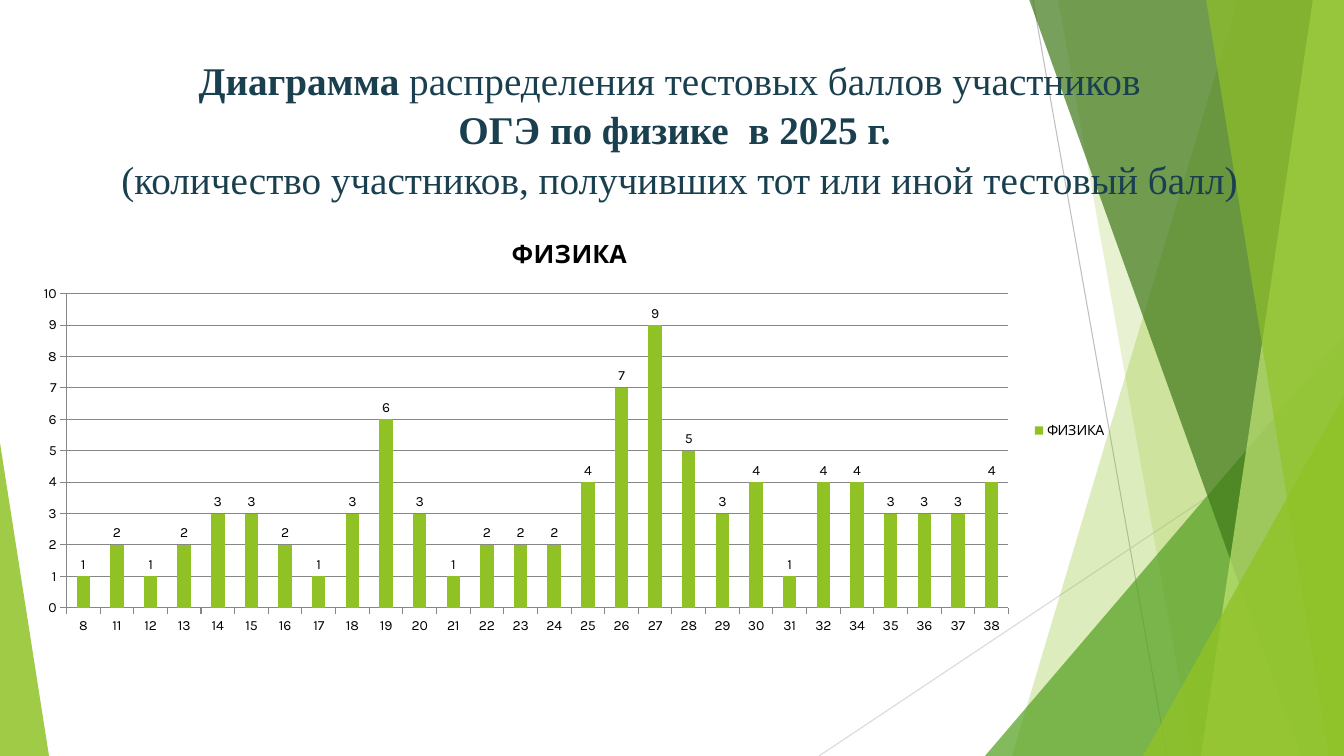
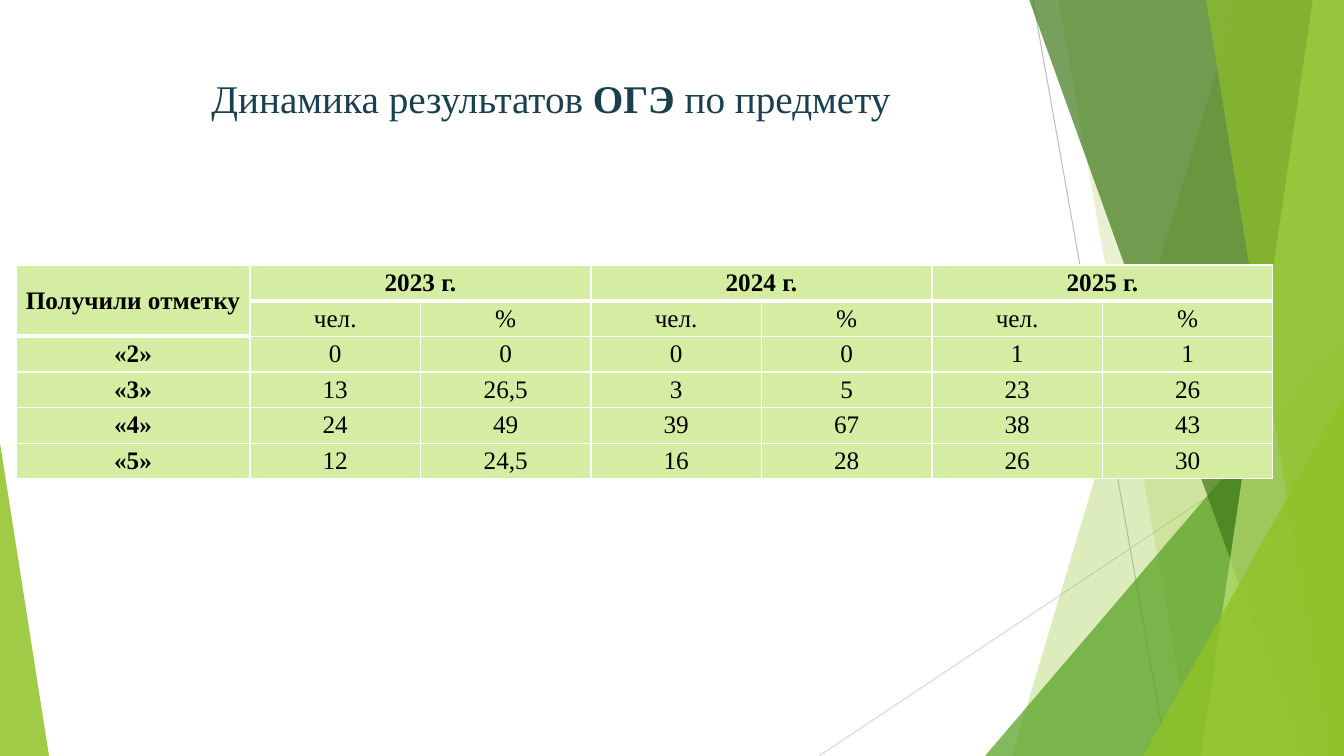
import pptx
import pptx.chart.data
import pptx.dml.color
import pptx.enum.chart
import pptx.enum.shapes
import pptx.enum.text
import pptx.oxml
import pptx.oxml.ns
import pptx.util

PX = 12192000 / 1344
SLIDE_WIDTH, SLIDE_HEIGHT = 1344, 756
WHITE, BLACK, INK = "FFFFFF", "000000", "1A4050"
GREEN, LEAF, FOREST, LIME, PALE = "90C226", "54A021", "3F7819", "C0E474", "D5EDA2"
GRID, RAY_DARK, RAY_LIGHT = "868686", "BFBFBF", "D9D9D9"
SERIF, SANS = "Times New Roman", "Karla"

DECORATION = [
    ("ray", (1033, 0, 1167, 756, RAY_DARK)),
    ("ray", (1344, 406, 819, 756, RAY_LIGHT)),
    ("band", (1238, 1012, GREEN, 30)),
    ("band", (1058, 1193, GREEN, 20)),
    ("wedge", (985, 336, 359, 420, 1, LEAF, 72)),
    ("band", (1029, 1301, FOREST, 70)),
    ("band", (1313, 1201, LIME, 70)),
    ("band", (1206, 1329, GREEN, 65)),
    ("wedge", (1143, 396, 201, 360, 1, GREEN, 80)),
    ("wedge", (0, 443, 49, 313, 0, GREEN, 85)),
]

SCORES = [8, *range(11, 33), *range(34, 39)]
PARTICIPANTS = [1, 2, 1, 2, 3, 3, 2, 1, 3, 6, 3, 1, 2, 2,
                2, 4, 7, 9, 5, 3, 4, 1, 4, 4, 3, 3, 3, 4]

MARKS = [
    ["Получили отметку", "2023 г.", "", "2024 г.", "", "2025 г.", ""],
    ["", *["чел.", "%"] * 3],
    ["«2»", "0", "0", "0", "0", "1", "1"],
    ["«3»", "13", "26,5", "3", "5", "23", "26"],
    ["«4»", "24", "49", "39", "67", "38", "43"],
    ["«5»", "12", "24,5", "16", "28", "26", "30"],
]
MERGES = [(0, 0, 1, 0), (0, 1, 0, 2), (0, 3, 0, 4), (0, 5, 0, 6)]


def emu(*lengths):
    return [round(length * PX) for length in lengths]


def rgb(value):
    return pptx.dml.color.RGBColor.from_string(value)


def apply(target, **values):
    for name, value in values.items():
        setattr(target, name, value)


class Deck:
    def __init__(self):
        self.presentation = pptx.Presentation()
        width, height = emu(SLIDE_WIDTH, SLIDE_HEIGHT)
        apply(self.presentation, slide_width=width, slide_height=height)
        self.slide = None

    def new_slide(self):
        self.slide = self.presentation.slides.add_slide(self.presentation.slide_layouts[6])
        self.slide.background.fill.solid()
        self.slide.background.fill.fore_color.rgb = rgb(WHITE)
        for kind, values in DECORATION:
            getattr(self, kind)(*values)

    def font(self, font, size, face, color, bold=False):
        apply(font, size=pptx.util.Pt(size), name=face, bold=bold)
        font.color.rgb = rgb(color)

    def tint(self, shape, color, opacity):
        shape.shadow.inherit = False
        shape.line.fill.background()
        shape.fill.solid()
        shape.fill.fore_color.rgb = rgb(color)
        for value in shape.element.spPr.iter(pptx.oxml.ns.qn("a:srgbClr")):
            alpha = pptx.oxml.parse_xml(
                f'<a:alpha {pptx.oxml.ns.nsdecls("a")} val="{opacity * 1000}"/>')
            value.append(alpha)

    def ray(self, x1, y1, x2, y2, color):
        ray = self.slide.shapes.add_connector(
            pptx.enum.shapes.MSO_CONNECTOR.STRAIGHT, *emu(x1, y1, x2, y2))
        ray.line.width = pptx.util.Pt(0.75)
        ray.line.color.rgb = rgb(color)
        ray.element.spPr.append(
            pptx.oxml.parse_xml(f'<a:effectLst {pptx.oxml.ns.nsdecls("a")}/>'))

    def band(self, top_x, bottom_x, color, opacity):
        outline = self.slide.shapes.build_freeform(top_x, -1, PX)
        outline.add_line_segments(
            [(SLIDE_WIDTH, -1), (SLIDE_WIDTH, SLIDE_HEIGHT), (bottom_x, SLIDE_HEIGHT)])
        self.tint(outline.convert_to_shape(), color, opacity)

    def wedge(self, x, y, width, height, apex, color, opacity):
        wedge = self.slide.shapes.add_shape(
            pptx.enum.shapes.MSO_SHAPE.ISOSCELES_TRIANGLE, *emu(x, y, width, height))
        wedge.adjustments[0] = apex
        self.tint(wedge, color, opacity)

    def title(self, x, y, width, height, phrases):
        frame = self.slide.shapes.add_textbox(*emu(x, y, width, height)).text_frame
        apply(frame, word_wrap=True, vertical_anchor=pptx.enum.text.MSO_ANCHOR.TOP)
        heading = frame.paragraphs[0]
        apply(heading, alignment=pptx.enum.text.PP_ALIGN.CENTER, line_spacing=1.05)
        heading._p.get_or_add_pPr().set("marL", str(emu(6)[0]))
        for phrase, bold in phrases:
            for number, piece in enumerate(phrase.split("\n")):
                if number:
                    heading.add_line_break()
                if piece:
                    run = heading.add_run()
                    run.text = piece
                    self.font(run.font, 28, SERIF, INK, bold)

    def column_chart(self, x, y, width, height, name, categories, values):
        data = pptx.chart.data.CategoryChartData()
        data.categories = [str(category) for category in categories]
        data.add_series(name, values)
        chart = self.slide.shapes.add_chart(
            pptx.enum.chart.XL_CHART_TYPE.COLUMN_CLUSTERED,
            *emu(x, y, width, height), data).chart
        self.font(chart.font, 10, SANS, BLACK)
        apply(chart, has_title=True, has_legend=True)
        caption = chart.chart_title.text_frame
        caption.text = name
        self.font(caption.paragraphs[0].runs[0].font, 18, SANS, BLACK, True)
        apply(chart.legend, include_in_layout=False,
              position=pptx.enum.chart.XL_LEGEND_POSITION.RIGHT)
        for axis in (chart.category_axis, chart.value_axis):
            axis.major_tick_mark = pptx.enum.chart.XL_TICK_MARK.OUTSIDE
            axis.format.line.color.rgb = rgb(GRID)
        chart.value_axis.has_major_gridlines = True
        chart.value_axis.major_gridlines.format.line.color.rgb = rgb(GRID)
        plot = chart.plots[0]
        apply(plot, gap_width=150, vary_by_categories=False, has_data_labels=True)
        apply(plot.data_labels, show_value=True,
              position=pptx.enum.chart.XL_LABEL_POSITION.OUTSIDE_END)
        columns = plot.series[0].format.fill
        columns.solid()
        columns.fore_color.rgb = rgb(GREEN)

    def borders(self, cell, **widths):
        for side, width in widths.items():
            cell._tc.get_or_add_tcPr().append(pptx.oxml.parse_xml(
                f'<a:ln{side} {pptx.oxml.ns.nsdecls("a")} w="{width * 12700}">'
                f'<a:solidFill><a:srgbClr val="{WHITE}"/></a:solidFill></a:ln{side}>'))

    def table(self, x, y, width, height, first_width, rows, merges):
        table = self.slide.shapes.add_table(
            len(rows), len(rows[0]), *emu(x, y, width, height)).table
        apply(table, first_row=False, horz_banding=False)
        others = len(rows[0]) - 1
        for index, column in enumerate(table.columns):
            share = (width - first_width) / others if index else first_width
            column.width = emu(share)[0]
        for row in table.rows:
            row.height = emu(height / len(rows))[0]
        for top, left, bottom, right in merges:
            table.cell(top, left).merge(table.cell(bottom, right))
        side_margin = emu(7)[0]
        for r, row in enumerate(rows):
            for c, text in enumerate(row):
                cell = table.cell(r, c)
                header_end = 0 if c else 1
                self.borders(cell, L=1, R=1,
                             T=3 if r == header_end + 1 else 1,
                             B=3 if r in (0, header_end) else 1)
                cell.fill.solid()
                cell.fill.fore_color.rgb = rgb(PALE)
                apply(cell, margin_left=side_margin, margin_right=side_margin,
                      margin_top=0, margin_bottom=0,
                      vertical_anchor=pptx.enum.text.MSO_ANCHOR.MIDDLE)
                entry = cell.text_frame.paragraphs[0]
                entry.alignment = pptx.enum.text.PP_ALIGN.CENTER
                if text:
                    run = entry.add_run()
                    run.text = text
                    self.font(run.font, 18, SERIF, BLACK, r == 0 or c == 0)


def main():
    deck = Deck()

    deck.new_slide()
    deck.title(-9, 49, 1361, 126, [
        ("Диаграмма ", True),
        ("распределения тестовых баллов участников \n", False),
        ("ОГЭ по физике  в 2025 г.\n ", True),
        ("(количество участников, получивших тот или иной тестовый балл)", False),
    ])
    deck.column_chart(22, 219, 1095, 423, "ФИЗИКА", SCORES, PARTICIPANTS)

    deck.new_slide()
    deck.title(74, 67, 948, 145, [
        ("Динамика результатов ", False), ("ОГЭ", True), (" по предмету", False),
    ])
    deck.table(16, 265, 1257, 214, 234, MARKS, MERGES)

    deck.presentation.save("out.pptx")


if __name__ == "__main__":
    main()
